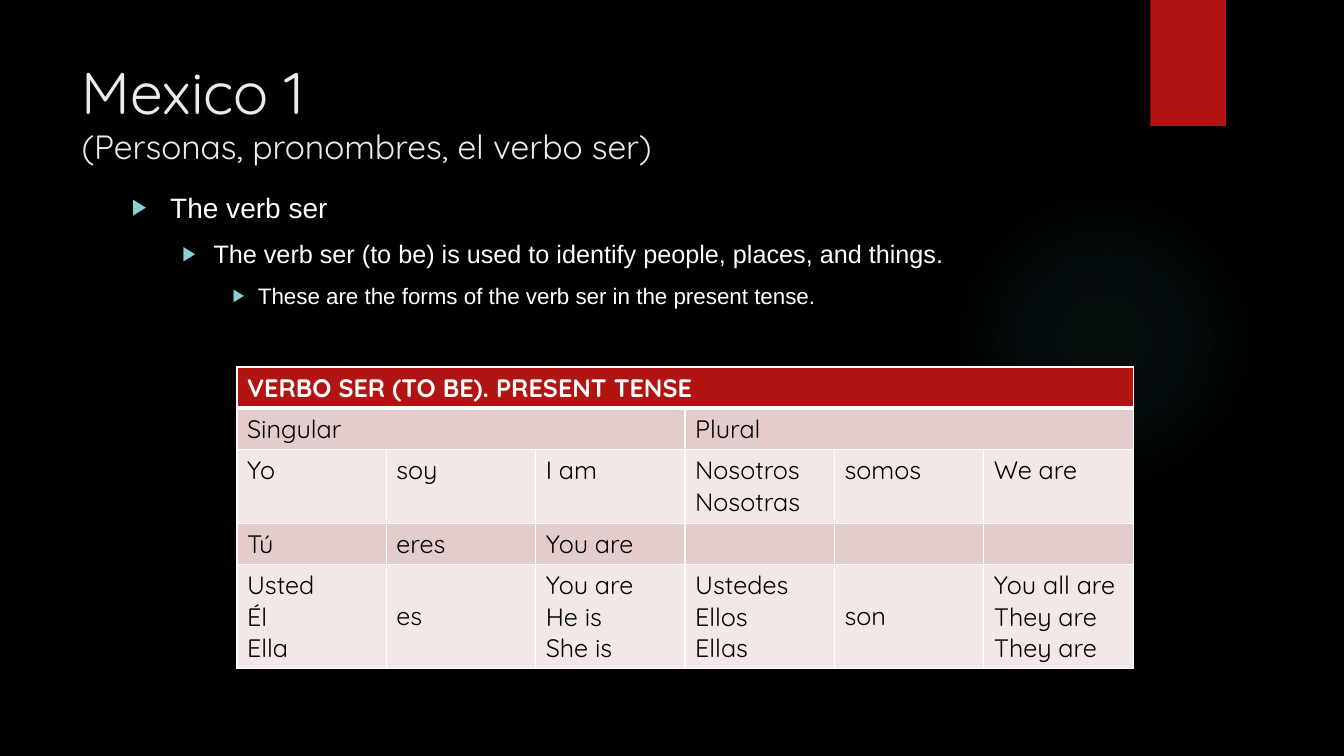
"""Build a slide on the present tense of the Spanish verb ser."""
from lxml.etree import SubElement
from pptx import Presentation
from pptx.dml.color import RGBColor
from pptx.enum.shapes import MSO_SHAPE
from pptx.enum.text import MSO_ANCHOR, MSO_AUTO_SIZE, PP_ALIGN
from pptx.oxml import parse_xml
from pptx.oxml.ns import nsdecls, qn
from pptx.util import Inches, Pt


def color(value):
    return RGBColor.from_string(value)


def style(font, name, size, value, bold=False):
    font.name = name
    font.size = Pt(size)
    font.bold = bold
    font.color.rgb = color(value)


deck = Presentation()
deck.slide_width = Inches(13.33)
deck.slide_height = Inches(7.5)
page = deck.slides.add_slide(deck.slide_layouts[5])
page.background.fill.solid()
page.background.fill.fore_color.rgb = color("000000")

glow = page.shapes.add_shape(
    MSO_SHAPE.OVAL, Inches(9.41), Inches(1.83), Inches(3.08), Inches(3.08))
glow.shadow.inherit = False
glow.line.fill.background()
stops = "".join(
    f'<a:gs pos="{position * 1000}"><a:srgbClr val="50B9C1">'
    f'<a:alpha val="{alpha * 1000}"/></a:srgbClr></a:gs>'
    for position, alpha in [(0, 7), (36, 6), (69, 0), (100, 0)])
glow.element.spPr.find(qn("a:prstGeom")).addnext(parse_xml(
    f'<a:gradFill {nsdecls("a")}><a:gsLst>{stops}</a:gsLst><a:path path="circle">'
    '<a:fillToRect l="50000" t="50000" r="50000" b="50000"/></a:path></a:gradFill>'))

ribbon = page.shapes.add_shape(
    MSO_SHAPE.RECTANGLE, Inches(11.41), 0, Inches(0.75), Inches(1.25))
ribbon.shadow.inherit = False
ribbon.fill.solid()
ribbon.fill.fore_color.rgb = color("B01513")
ribbon.line.fill.background()

title = page.shapes.title
title.left, title.top = Inches(0.71), Inches(0.5)
title.width, title.height = Inches(10.29), Inches(1.53)
title.text_frame.text = "Mexico 1\v(Personas, pronombres, el verbo ser)"
title.text_frame.auto_size = MSO_AUTO_SIZE.NONE
title.text_frame.vertical_anchor = MSO_ANCHOR.TOP
heading = title.text_frame.paragraphs[0]
heading.alignment = PP_ALIGN.LEFT
for span, size in zip(heading.runs, (42, 24)):
    style(span.font, "Quicksand", size, "EBEBEB")

body = page.shapes.add_textbox(Inches(1.21), Inches(1.84), Inches(10.63), Inches(4.59))
body.text_frame.word_wrap = True
points = [
    ("The verb ser", 20, 0.38, 0.38),
    ("The verb ser (to be) is used to identify people, places, and things.", 18, 0.81, 0.31),
    ("These are the forms of the verb ser in the present tense.", 16, 1.25, 0.25),
]
for level, (text, size, margin, hanging) in enumerate(points):
    para = body.text_frame.add_paragraph() if level else body.text_frame.paragraphs[0]
    para.text = text
    para.level = level
    if level:
        para.space_before = Pt(10)
    properties = para._p.get_or_add_pPr()
    properties.set("marL", str(Inches(margin)))
    properties.set("indent", str(-Inches(hanging)))
    SubElement(SubElement(properties, qn("a:buClr")), qn("a:srgbClr"), val="8AD0D6")
    SubElement(properties, qn("a:buSzPct"), val="80000")
    SubElement(properties, qn("a:buFont"), typeface="Arial")
    SubElement(properties, qn("a:buChar"), char="▶")
    style(para.runs[0].font, "Arial", size, "FFFFFF")

rows = [
    ["VERBO SER (TO BE). PRESENT TENSE", "", "", "", "", ""],
    ["Singular", "", "", "Plural", "", ""],
    ["Yo", "soy", "I am", "Nosotros\nNosotras", "somos", "We are"],
    ["Tú", "eres", "You are", "", "", ""],
    ["Usted\nÉl\nElla", "es", "You are\nHe is\nShe is",
     "Ustedes\nEllos\nEllas", "son", "You all are\nThey are\nThey are"],
]
heights = [0.41, 0.41, 0.73, 0.41, 1.03]
fills = ["B01513", "E4CCCC", "F2E8E7", "E4CCCC", "F2E8E7"]
table = page.shapes.add_table(
    len(rows), 6, Inches(2.35), Inches(3.64), Inches(8.89), Inches(sum(heights))).table
for column in table.columns:
    column.width = Inches(8.89 / 6)
for row, (texts, height, fill) in enumerate(zip(rows, heights, fills)):
    table.rows[row].height = Inches(height)
    for column, text in enumerate(texts):
        cell = table.cell(row, column)
        cell.text = text
        for para in cell.text_frame.paragraphs:
            for span in para.runs:
                style(span.font, "Quicksand", 18, "000000" if row else "FFFFFF", row == 0)
        if text in ("es", "son"):
            cell.vertical_anchor = MSO_ANCHOR.MIDDLE
        for side in ("L", "R", "T", "B"):
            thick = (row, side) in ((0, "B"), (1, "T"))
            border = SubElement(
                cell._tc.get_or_add_tcPr(), qn(f"a:ln{side}"), w=str(Pt(3 if thick else 1)))
            SubElement(SubElement(border, qn("a:solidFill")), qn("a:srgbClr"), val="FFFFFF")
        cell.fill.solid()
        cell.fill.fore_color.rgb = color(fill)
for row, first, last in [(0, 0, 5), (1, 0, 2), (1, 3, 5)]:
    table.cell(row, first).merge(table.cell(row, last))

deck.save("out.pptx")
